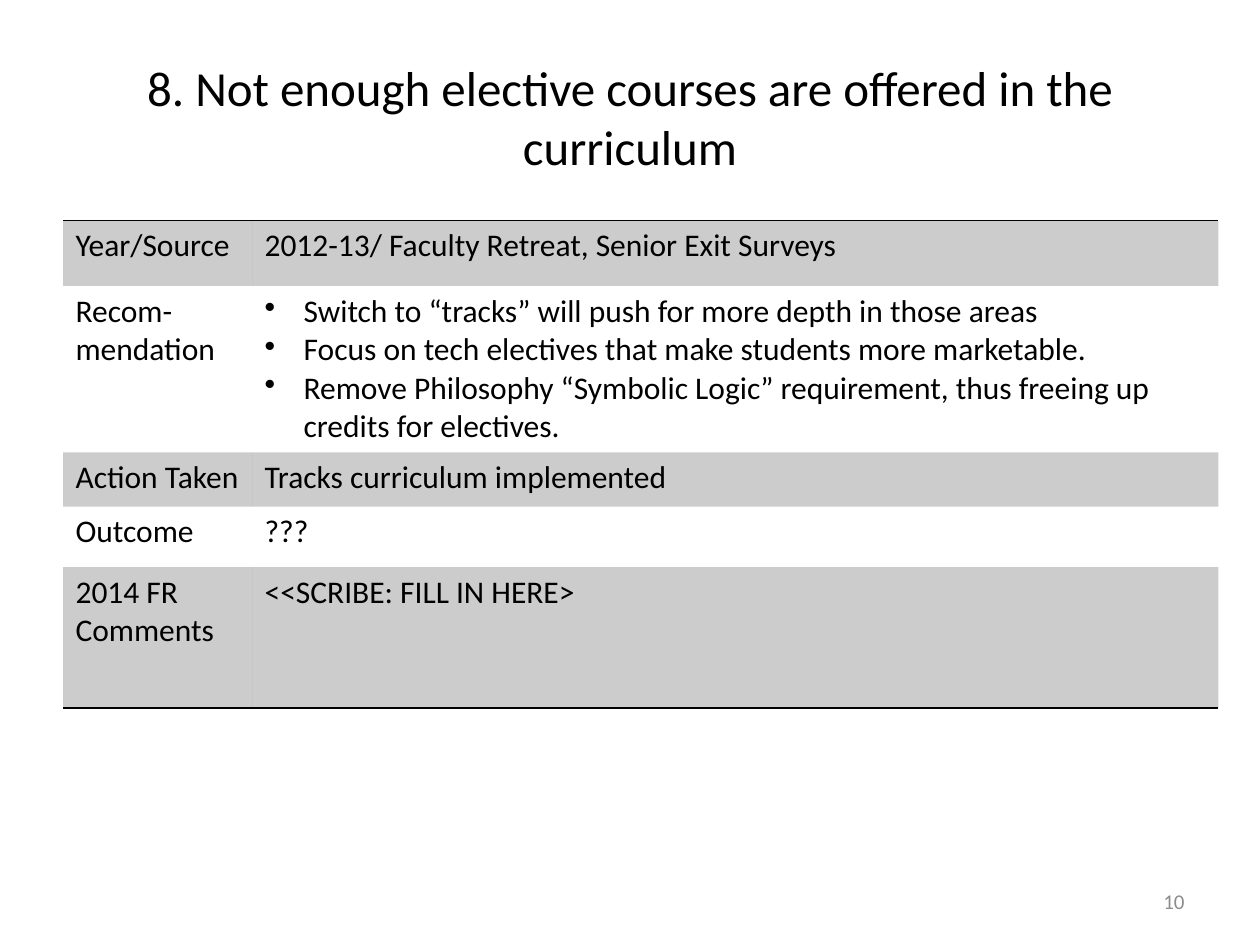
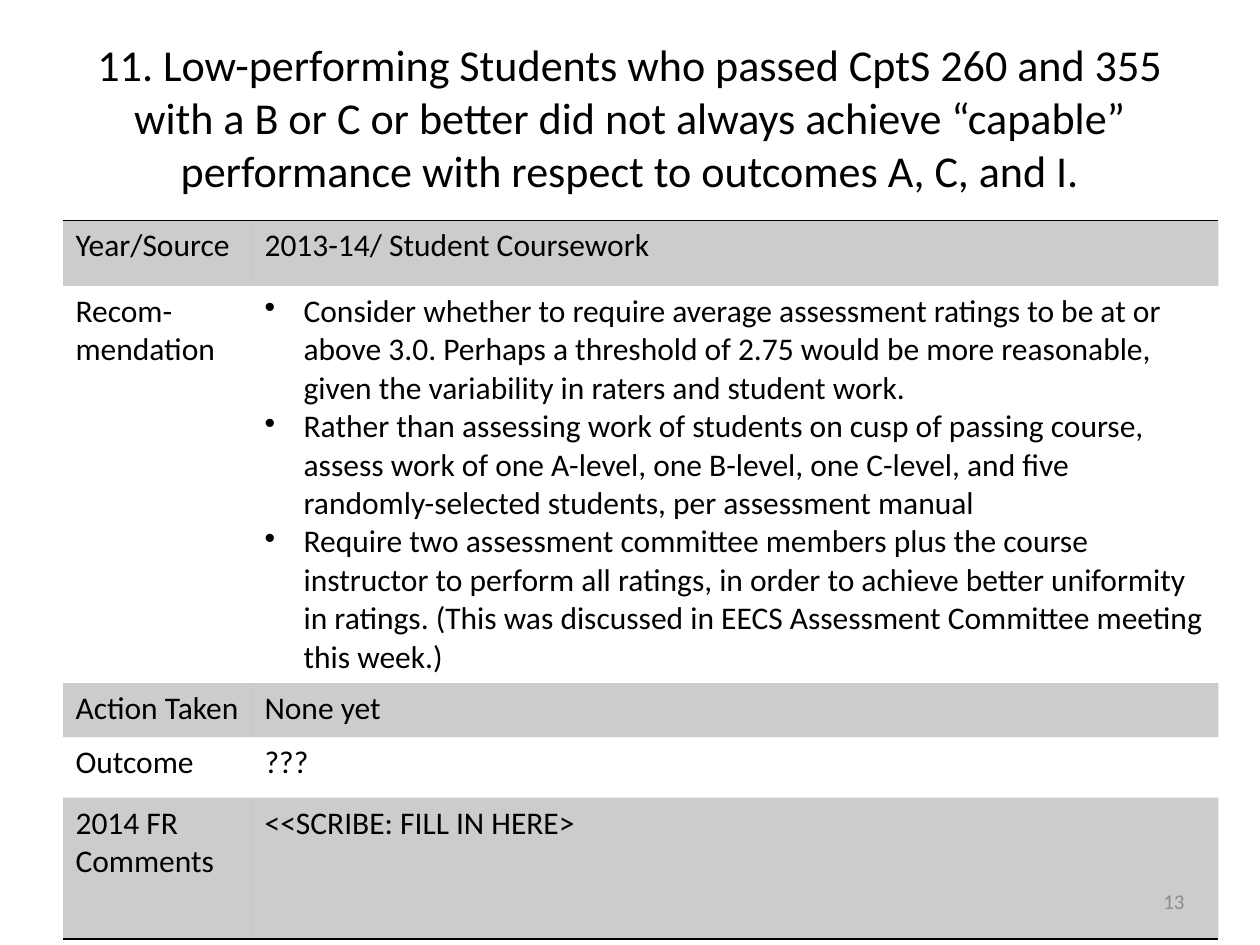
from dataclasses import dataclass

from lxml import etree
from pptx import Presentation
from pptx import util as u
from pptx.dml.color import RGBColor
from pptx.enum import text
from pptx.oxml import ns

# Shared look
FONT = "Calibri"
BLACK, NUMBER_GREY = "000000", "8C8C8C"
BAND_ALPHA = 20
BODY_SIZE, NUMBER_SIZE = 18, 12
WIDTH, HEIGHT = u.Inches(10), u.Inches(7.5)
NO_TABLE_STYLE = "{2D5ABB26-0587-4C30-8999-92F81FD0307C}"

# Table grid, in inches
COLUMNS = (1.5, 7.67)
ROWS = (0.52, 0.81, 0.43, 0.48, 1.12)
LABELS = ("Year/Source", "Recom-\nmendation", "Action Taken", "Outcome", "2014 FR Comments")
BULLET_INDENT = u.Inches(0.31)


@dataclass(frozen=True)
class Box:
    """A place given as shares of the slide's width and height."""
    left: float
    top: float
    width: float
    height: float

    def lengths(self) -> tuple[int, int, int, int]:
        return (round(self.left * WIDTH), round(self.top * HEIGHT),
                round(self.width * WIDTH), round(self.height * HEIGHT))


TITLE_BOX = Box(0.05, 0.04, 0.9, 1 / 6)
TABLE_BOX = Box(0.05, 1.75 / 7.5, sum(COLUMNS) / 10, sum(ROWS) / 7.5)
NUMBER_BOX = Box(0.717, 6.95 / 7.5, 0.233, 0.4 / 7.5)


@dataclass(frozen=True)
class Finding:
    number: int
    title: str
    title_size: float
    source: str
    recommendations: tuple[str, ...]
    action: str
    outcome: str = "???"
    comments: str = "<<SCRIBE: FILL IN HERE>"

    def answers(self) -> tuple[str, ...]:
        return (self.source, "\n".join(self.recommendations),
                self.action, self.outcome, self.comments)


FINDINGS = (
    Finding(
        10, "8. Not enough elective courses are offered in the curriculum", 28,
        "2012-13/ Faculty Retreat, Senior Exit Surveys",
        ("Switch to “tracks” will push for more depth in those areas",
         "Focus on tech electives that make students more marketable.",
         "Remove Philosophy “Symbolic Logic” requirement, thus freeing up "
         "credits for electives."),
        "Tracks curriculum implemented"),
    Finding(
        13, "11. Low-performing Students who passed CptS 260 and 355 with a B or C or better "
        "did not always achieve “capable” performance with respect to outcomes A, C, and I.", 25.2,
        "2013-14/ Student Coursework",
        ("Consider whether to require average assessment ratings to be at or above 3.0. "
         "Perhaps a threshold of 2.75 would be more reasonable, given the variability in "
         "raters and student work.",
         "Rather than assessing work of students on cusp of passing course, assess work of "
         "one A-level, one B-level, one C-level, and five randomly-selected students, "
         "per assessment manual",
         "Require two assessment committee members plus the course instructor to perform all "
         "ratings, in order to achieve better uniformity in ratings. (This was discussed in "
         "EECS Assessment Committee meeting this week.)"),
        "None yet"),
)


def color(value: str) -> RGBColor:
    return RGBColor.from_string(value)


def write(frame, content: str, size: float, ink: str = BLACK, align=text.PP_ALIGN.LEFT) -> None:
    frame.text = content
    for paragraph in frame.paragraphs:
        paragraph.alignment = align
        paragraph.font.name = FONT
        paragraph.font.size = u.Pt(size)
        paragraph.font.color.rgb = color(ink)


# Cell details that need XML
def add_bullet(paragraph) -> None:
    properties = paragraph._p.get_or_add_pPr()
    properties.set("marL", str(BULLET_INDENT))
    properties.set("indent", str(-BULLET_INDENT))
    bullet = etree.Element(ns.qn("a:buChar"), char="•")
    properties.insert(0, bullet)


def add_border(cell, side: str) -> None:
    line = etree.Element(ns.qn(f"a:ln{side}"), w=str(u.Pt(1)))
    fill = etree.SubElement(line, ns.qn("a:solidFill"))
    etree.SubElement(fill, ns.qn("a:srgbClr"), val=BLACK)
    cell._tc.get_or_add_tcPr().insert(0, line)


def shade(cell) -> None:
    cell.fill.solid()
    cell.fill.fore_color.rgb = color(BLACK)
    ink = cell._tc.tcPr.find(".//" + ns.qn("a:srgbClr"))
    etree.SubElement(ink, ns.qn("a:alpha"), val=str(BAND_ALPHA * 1000))


# Slide parts
def add_title(slide, finding: Finding) -> None:
    title = slide.shapes.title
    title.left, title.top, title.width, title.height = TITLE_BOX.lengths()
    frame = title.text_frame
    frame.auto_size = text.MSO_AUTO_SIZE.NONE
    frame.vertical_anchor = text.MSO_ANCHOR.MIDDLE
    write(frame, finding.title, finding.title_size, align=text.PP_ALIGN.CENTER)


def add_finding_table(slide, finding: Finding) -> None:
    table = slide.shapes.add_table(len(ROWS), len(COLUMNS), *TABLE_BOX.lengths()).table
    table.first_row = table.horz_banding = False
    table._tbl.tblPr.find(ns.qn("a:tableStyleId")).text = NO_TABLE_STYLE
    for column, width in zip(table.columns, COLUMNS):
        column.width = u.Inches(width)

    for index, contents in enumerate(zip(LABELS, finding.answers())):
        table.rows[index].height = u.Inches(ROWS[index])
        for cell, content in zip(table.rows[index].cells, contents):
            write(cell.text_frame, content, BODY_SIZE)
            if index % 2 == 0:
                shade(cell)
            else:
                cell.fill.background()
            if index == 0:
                add_border(cell, "T")
            if index == len(ROWS) - 1:
                add_border(cell, "B")

    for paragraph in table.cell(1, 1).text_frame.paragraphs:
        add_bullet(paragraph)


def add_number(slide, number: int) -> None:
    frame = slide.shapes.add_textbox(*NUMBER_BOX.lengths()).text_frame
    frame.word_wrap = True
    frame.vertical_anchor = text.MSO_ANCHOR.MIDDLE
    write(frame, str(number), NUMBER_SIZE, NUMBER_GREY, text.PP_ALIGN.RIGHT)


def main() -> None:
    presentation = Presentation()
    presentation.slide_width, presentation.slide_height = WIDTH, HEIGHT
    title_only = presentation.slide_layouts[5]
    for finding in FINDINGS:
        slide = presentation.slides.add_slide(title_only)
        add_title(slide, finding)
        add_finding_table(slide, finding)
        add_number(slide, finding.number)
    presentation.save("out.pptx")


if __name__ == "__main__":
    main()
